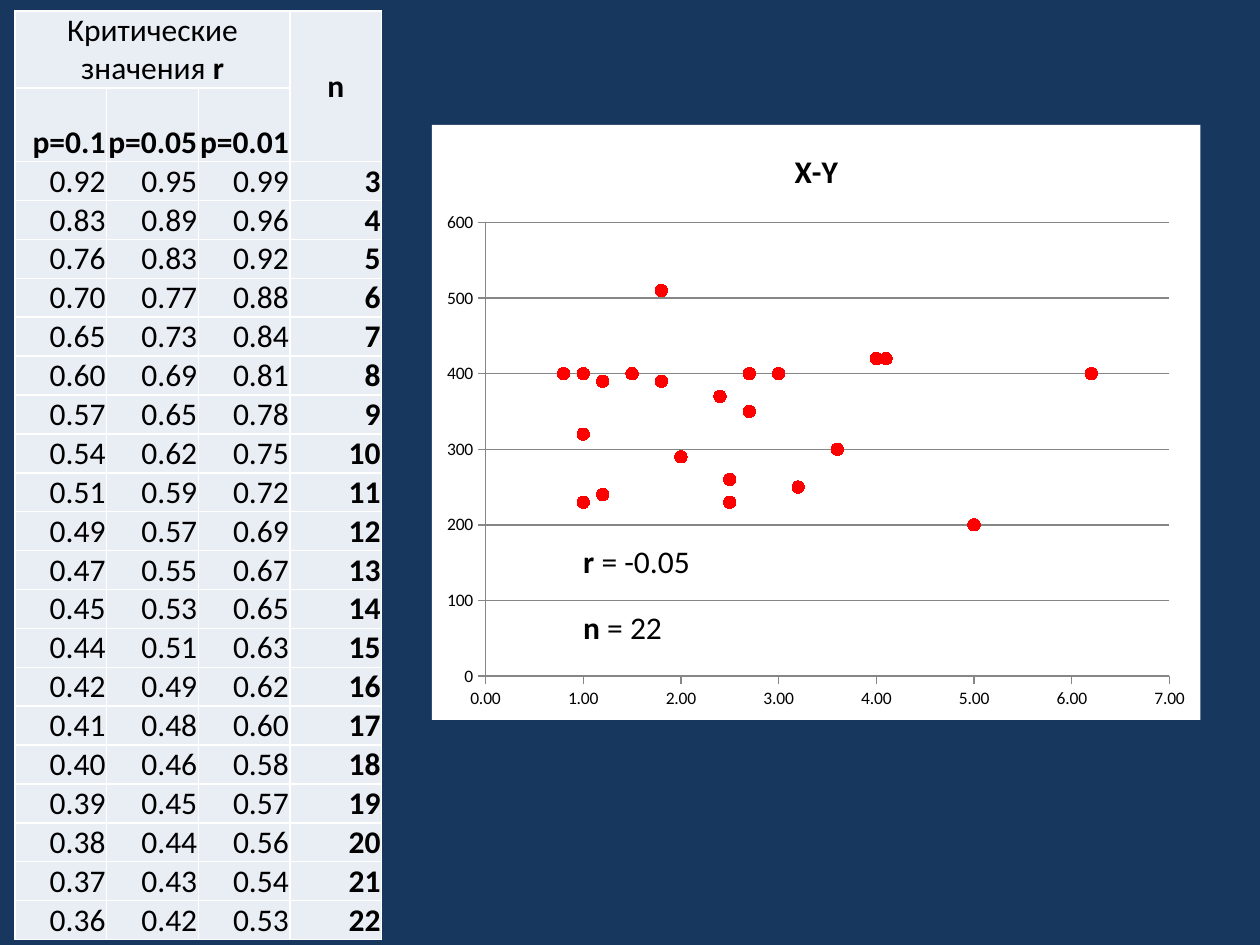
import lxml.etree
import pptx
import pptx.chart.data
import pptx.dml.color
import pptx.enum.chart
import pptx.enum.text
import pptx.oxml
import pptx.oxml.ns
import pptx.util

Pt = pptx.util.Pt
RGBColor = pptx.dml.color.RGBColor
ALIGN = pptx.enum.text.PP_ALIGN
ANCHOR = pptx.enum.text.MSO_ANCHOR
TICK = pptx.enum.chart.XL_TICK_MARK

NAVY = RGBColor(0x17, 0x37, 0x5E)
PALE = RGBColor(0xE9, 0xED, 0xF4)
WHITE = RGBColor(0xFF, 0xFF, 0xFF)
BLACK = RGBColor(0, 0, 0)
RED = RGBColor(0xFF, 0, 0)
GRAY = RGBColor(0x86, 0x86, 0x86)
FONT = "Calibri"

TABLE_TITLE = [("Критические значения ", False), ("r", True)]
LEVELS = ["p=0.1", "p=0.05", "p=0.01"]
FIRST_N = 3
CRITICAL_VALUES = [
    ("0.92", "0.95", "0.99"), ("0.83", "0.89", "0.96"),
    ("0.76", "0.83", "0.92"), ("0.70", "0.77", "0.88"),
    ("0.65", "0.73", "0.84"), ("0.60", "0.69", "0.81"),
    ("0.57", "0.65", "0.78"), ("0.54", "0.62", "0.75"),
    ("0.51", "0.59", "0.72"), ("0.49", "0.57", "0.69"),
    ("0.47", "0.55", "0.67"), ("0.45", "0.53", "0.65"),
    ("0.44", "0.51", "0.63"), ("0.42", "0.49", "0.62"),
    ("0.41", "0.48", "0.60"), ("0.40", "0.46", "0.58"),
    ("0.39", "0.45", "0.57"), ("0.38", "0.44", "0.56"),
    ("0.37", "0.43", "0.54"), ("0.36", "0.42", "0.53"),
]
POINTS = [
    (1, 400), (2.4, 370), (1.8, 390), (2.7, 350), (1.5, 400),
    (3.6, 300), (0.8, 400), (1, 230), (2.5, 230), (1, 320),
    (1.2, 240), (2.5, 260), (4, 420), (3.2, 250), (3, 400),
    (2.7, 400), (4.1, 420), (1.8, 510), (6.2, 400), (1.2, 390),
    (2, 290), (5, 200),
]
RESULTS = [
    ([("r ", True), ("= -0.05", False)], 306.3, 76.3),
    ([("n ", True), ("= 22", False)], 343.8, 59.8),
]
RESULT_LEFT, RESULT_HEIGHT = 326.2, 29
TABLE_LEFT, TABLE_TOP = 8.6, 6.2
COLUMN_WIDTH, HEADER_HEIGHT, ROW_HEIGHT = 52.4, 42, 22.25
CHART_BOX = (246.8, 71.4, 439.2, 340)
PLOT_BOX = (277.4, 127.2, 390.9, 259.3)


def style_font(font, size, bold=False):
    font.name, font.size, font.bold = FONT, Pt(size), bold
    font.color.rgb = BLACK


def write_runs(paragraph, runs):
    for text, bold in runs:
        run = paragraph.add_run()
        run.text = text
        style_font(run.font, 18, bold)


def fill_cell(cell, runs, alignment=ALIGN.RIGHT, anchor=ANCHOR.BOTTOM):
    cell.vertical_anchor = anchor
    paragraph = cell.text_frame.paragraphs[0]
    paragraph.alignment = alignment
    write_runs(paragraph, runs)


def format_cell(cell):
    cell.margin_left = cell.margin_right = Pt(0.7)
    cell.margin_top, cell.margin_bottom = Pt(0.25), 0
    properties = cell._tc.get_or_add_tcPr()
    for side in ("lnL", "lnR", "lnT", "lnB"):
        properties.append(pptx.oxml.parse_xml(
            f'<a:{side} {pptx.oxml.ns.nsdecls("a")} w="12700"><a:solidFill>'
            f'<a:srgbClr val="{WHITE}"/></a:solidFill></a:{side}>'))
    cell.fill.solid()
    cell.fill.fore_color.rgb = PALE


def add_critical_table(slide):
    row_heights = [HEADER_HEIGHT] * 2 + [ROW_HEIGHT] * len(CRITICAL_VALUES)
    column_count = len(LEVELS) + 1
    table = slide.shapes.add_table(
        len(row_heights), column_count, Pt(TABLE_LEFT), Pt(TABLE_TOP),
        Pt(COLUMN_WIDTH * column_count), Pt(sum(row_heights))).table
    table.first_row = table.horz_banding = False
    for column in table.columns:
        column.width = Pt(COLUMN_WIDTH)
    for row, height in zip(table.rows, row_heights):
        row.height = Pt(height)
    for cell in table.iter_cells():
        format_cell(cell)
    table.cell(0, 0).merge(table.cell(0, 2))
    table.cell(0, 3).merge(table.cell(1, 3))
    fill_cell(table.cell(0, 0), TABLE_TITLE, ALIGN.CENTER, ANCHOR.MIDDLE)
    fill_cell(table.cell(0, 3), [("n", True)], ALIGN.CENTER, ANCHOR.MIDDLE)
    for column, level in enumerate(LEVELS):
        fill_cell(table.cell(1, column), [(level, True)])
    for index, values in enumerate(CRITICAL_VALUES):
        for column, value in enumerate(values):
            fill_cell(table.cell(index + 2, column), [(value, False)])
        fill_cell(table.cell(index + 2, 3), [(str(FIRST_N + index), True)])


def format_axis(axis, maximum, step, number_format):
    axis.minimum_scale, axis.maximum_scale, axis.major_unit = 0, maximum, step
    axis.major_tick_mark, axis.minor_tick_mark = TICK.OUTSIDE, TICK.NONE
    axis.tick_labels.number_format = number_format
    axis.tick_labels.number_format_is_linked = False
    style_font(axis.tick_labels.font, 10)
    axis.format.line.color.rgb = GRAY
    axis.format.line.width = Pt(0.75)


def place_plot_area(chart):
    namespaces = pptx.oxml.ns.nsdecls("c", "a")
    chart_element = chart._chartSpace.find(pptx.oxml.ns.qn("c:chart"))
    plot_area = chart_element.find(pptx.oxml.ns.qn("c:plotArea"))
    for layout in plot_area.findall(pptx.oxml.ns.qn("c:layout")):
        plot_area.remove(layout)
    left, top, width, height = CHART_BOX
    plot_left, plot_top, plot_width, plot_height = PLOT_BOX
    fractions = {
        "x": (plot_left - left) / width, "y": (plot_top - top) / height,
        "w": plot_width / width, "h": plot_height / height,
    }
    sizes = "".join(f'<c:{key} val="{value:.4f}"/>' for key, value in fractions.items())
    plot_area.insert(0, pptx.oxml.parse_xml(
        f'<c:layout {namespaces}><c:manualLayout><c:layoutTarget val="inner"/>'
        f'<c:xMode val="edge"/><c:yMode val="edge"/>{sizes}'
        '</c:manualLayout></c:layout>'))
    chart_element.addnext(pptx.oxml.parse_xml(
        f'<c:spPr {namespaces}><a:solidFill><a:srgbClr val="{WHITE}"/>'
        '</a:solidFill><a:ln><a:noFill/></a:ln></c:spPr>'))


def add_scatter_chart(slide):
    data = pptx.chart.data.XyChartData()
    points = data.add_series("Series 1")
    for x, y in POINTS:
        points.add_data_point(x, y)
    chart = slide.shapes.add_chart(
        pptx.enum.chart.XL_CHART_TYPE.XY_SCATTER,
        *[Pt(length) for length in CHART_BOX], data).chart
    style_font(chart.font, 10)
    chart.has_legend = False
    chart.has_title = True
    chart.chart_title.include_in_layout = False
    title = chart.chart_title.text_frame
    title.text = "X-Y"
    style_font(title.paragraphs[0].runs[0].font, 18, True)
    format_axis(chart.category_axis, 7, 1, "0.00")
    format_axis(chart.value_axis, 600, 100, "0")
    chart.category_axis.has_major_gridlines = False
    chart.value_axis.has_major_gridlines = True
    gridline = chart.value_axis.major_gridlines.format.line
    gridline.color.rgb, gridline.width = GRAY, Pt(0.75)
    chart.plots[0].vary_by_categories = False
    series = chart.plots[0].series[0]
    series.smooth = False
    series.format.line.fill.background()
    marker = series.marker
    marker.style, marker.size = pptx.enum.chart.XL_MARKER_STYLE.CIRCLE, 7
    marker.format.fill.solid()
    marker.format.fill.fore_color.rgb = RED
    marker.format.line.color.rgb = RED
    place_plot_area(chart)


def add_result(slide, runs, top, width):
    text_frame = slide.shapes.add_textbox(
        Pt(RESULT_LEFT), Pt(top), Pt(width), Pt(RESULT_HEIGHT)).text_frame
    text_frame.word_wrap = False
    text_frame.auto_size = pptx.enum.text.MSO_AUTO_SIZE.SHAPE_TO_FIT_TEXT
    write_runs(text_frame.paragraphs[0], runs)


def main():
    presentation = pptx.Presentation()
    presentation.slide_width, presentation.slide_height = Pt(720), Pt(540)
    slide = presentation.slides.add_slide(presentation.slide_layouts[6])
    slide.background.fill.solid()
    slide.background.fill.fore_color.rgb = NAVY
    add_scatter_chart(slide)
    add_critical_table(slide)
    for runs, top, width in RESULTS:
        add_result(slide, runs, top, width)
    presentation.save("out.pptx")


if __name__ == "__main__":
    main()
